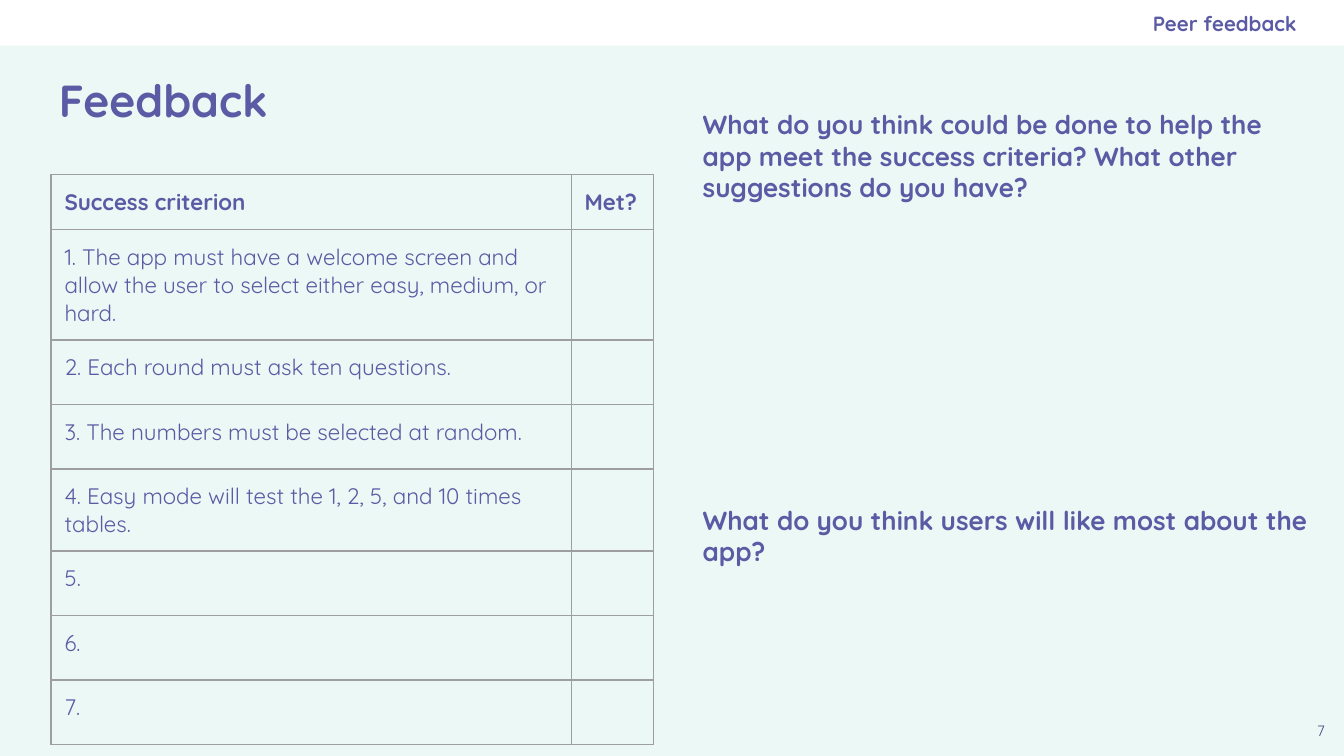
from lxml import etree
from pptx import Presentation
from pptx.dml.color import RGBColor
from pptx.enum.shapes import MSO_SHAPE
from pptx.enum.text import MSO_ANCHOR, PP_ALIGN
from pptx.oxml import parse_xml
from pptx.oxml.ns import nsdecls, qn
from pptx.util import Inches, Pt

RECT = MSO_SHAPE.RECTANGLE
TOP, MID = MSO_ANCHOR.TOP, MSO_ANCHOR.MIDDLE
LEFT, MIDDLE, RIGHT = PP_ALIGN.LEFT, PP_ALIGN.CENTER, PP_ALIGN.RIGHT
FONT = "Quicksand"
MINT, WHITE, GREY = "ECF8F5", "FFFFFF", "9E9E9E"
PURPLE, DARK = "5B5BA5", "494985"
WIDTH = 10
HEIGHT = WIDTH * 9 / 16

CRITERIA = [
    "1. The app must have a welcome screen and allow the user to select "
    "either easy, medium, or hard.",
    "2. Each round must ask ten questions.",
    "3. The numbers must be selected at random.",
    "4. Easy mode will test the 1, 2, 5, and 10 times tables.",
    "5.", "6.", "7.",
]
ROWS = [0.41, 0.82, 0.48, 0.48, 0.61, 0.48, 0.48, 0.48]
COLS = [3.87, 0.61]


def color(code):
    return RGBColor.from_string(code)


def write(frame, text, size=12, bold=False, code=PURPLE, align=LEFT):
    para = frame.paragraphs[0]
    para.alignment = align
    run = para.add_run()
    run.text = text
    font = run.font
    font.name, font.size, font.bold = FONT, Pt(size), bold
    font.color.rgb = color(code)


def add_text(slide, box, text, anchor=TOP, right=0.1, **style):
    frame = slide.shapes.add_textbox(*map(Inches, box)).text_frame
    frame.word_wrap = True
    frame.vertical_anchor = anchor
    frame.margin_left = frame.margin_top = frame.margin_bottom = Inches(0.1)
    frame.margin_right = Inches(right)
    write(frame, text, **style)


def add_border(cell):
    props = cell._tc.get_or_add_tcPr()
    for i, side in enumerate(("lnL", "lnR", "lnT", "lnB")):
        props.insert(i, parse_xml(
            f'<a:{side} {nsdecls("a")} w="{Pt(0.75)}"><a:solidFill>'
            f'<a:srgbClr val="{GREY}"/></a:solidFill></a:{side}>'))


def add_header(slide, x, y, w, h):
    band = slide.shapes.add_shape(RECT, *map(Inches, (x, y, w, h)))
    band.shadow.inherit = False
    band.fill.solid()
    band.fill.fore_color.rgb = color(WHITE)
    band.line.fill.background()
    add_text(slide, (x + w - 4.25, y, 3.9, h), "Peer feedback", anchor=MID,
             right=0, size=11, bold=True, align=RIGHT)


def add_criteria(slide, x, y):
    size = map(Inches, (x, y, sum(COLS), sum(ROWS)))
    table = slide.shapes.add_table(len(ROWS), len(COLS), *size).table
    table.first_row = table.horz_banding = False
    for col, width in zip(table.columns, COLS):
        col.width = Inches(width)
    for row, height in zip(table.rows, ROWS):
        row.height = Inches(height)
    cells = [("Success criterion", "Met?")] + [(text, "") for text in CRITERIA]
    for r, texts in enumerate(cells):
        for c, text in enumerate(texts):
            cell = table.cell(r, c)
            cell.margin_left = cell.margin_right = Inches(0.1)
            cell.margin_top = cell.margin_bottom = Inches(0.1)
            cell.fill.background()
            add_border(cell)
            if text:
                write(cell.text_frame, text, bold=r == 0)
            else:
                # Keep the empty line as low as the text lines
                end = etree.SubElement(cell.text_frame.paragraphs[0]._p,
                                       qn("a:endParaRPr"))
                end.set("sz", "1200")


def add_questions(slide, x, y, w):
    add_text(slide, (x, y, w, 0.54),
             "What do you think could be done to help the app meet the success "
             "criteria? What other suggestions do you have?",
             size=14, bold=True)
    add_text(slide, (x, y + 2.94, w, 0.38),
             "What do you think users will like most about the app?",
             size=14, bold=True)


def main():
    deck = Presentation()
    deck.slide_width, deck.slide_height = Inches(WIDTH), Inches(HEIGHT)
    slide = deck.slides.add_slide(deck.slide_layouts[6])
    slide.background.fill.solid()
    slide.background.fill.fore_color.rgb = color(MINT)

    # Header band and title
    add_header(slide, 0, 0, WIDTH, 0.34)
    add_text(slide, (0.34, 0.35, 9.32, 0.78), "Feedback", anchor=MID,
             size=24, bold=True)

    # Criteria on the left, questions on the right
    add_criteria(slide, 0.38, 1.3)
    add_questions(slide, 5.13, 0.71, 4.78)

    # Page number
    add_text(slide, (9.66, 5.3, 0.34, 0.34), "7", size=8, code=DARK,
             align=MIDDLE)
    deck.save("out.pptx")


if __name__ == "__main__":
    main()
